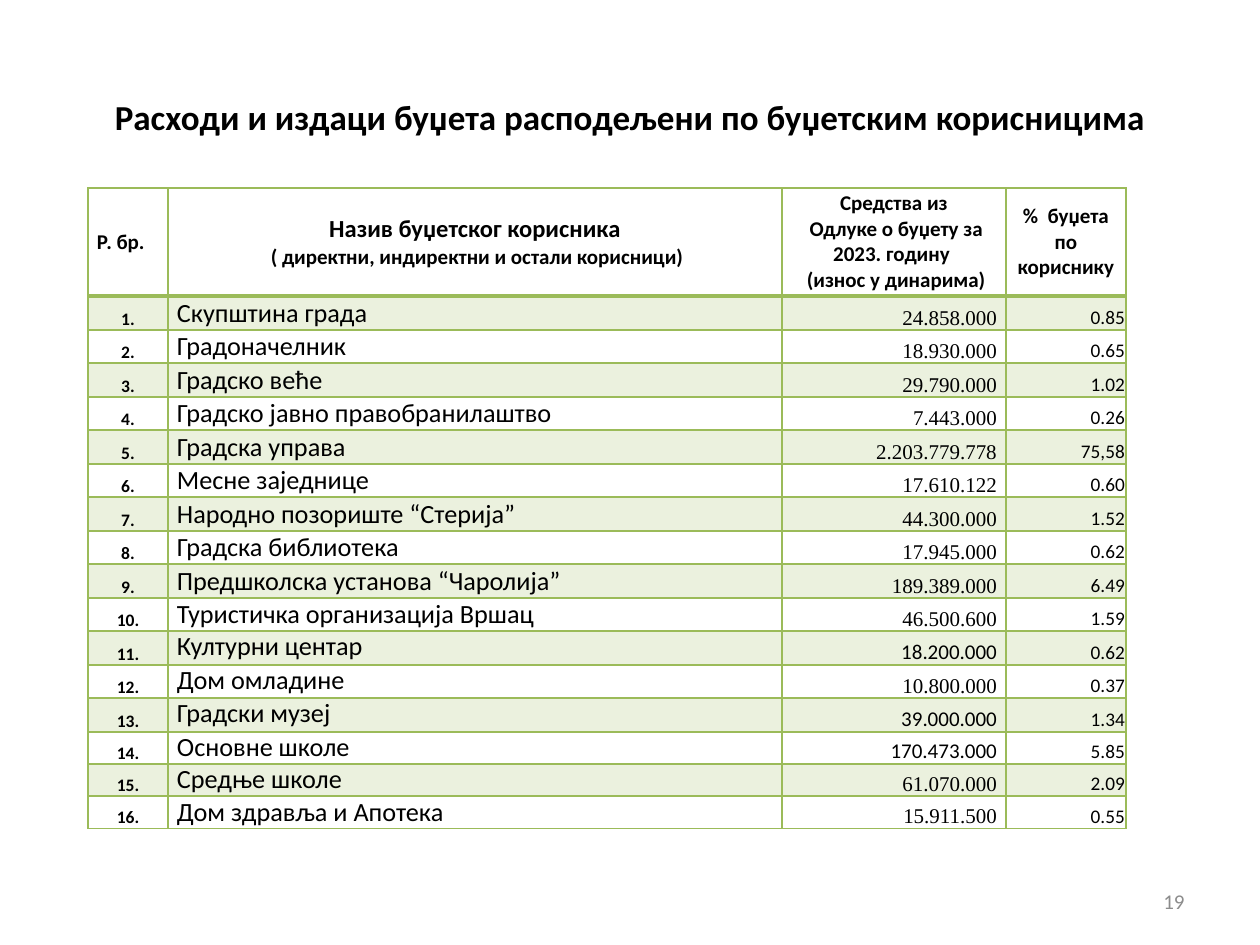
import pptx
import pptx.util
import pptx.dml.color
import pptx.enum.text
import pptx.oxml
import pptx.oxml.ns
from dataclasses import dataclass

ALIGN = pptx.enum.text.PP_ALIGN
ANCHOR = pptx.enum.text.MSO_ANCHOR


@dataclass(frozen=True)
class Theme:
    ink: str = "000000"
    grey: str = "8C8C8C"
    line: str = "9BBB59"
    band: str = "EBF1DE"
    sans: str = "Calibri"
    serif: str = "Times New Roman"
    title: int = 20
    name: int = 15
    head: int = 14
    body: int = 12
    share: int = 11
    index: int = 10
    thin: int = 1
    thick: int = 2


THEME = Theme()


def px(count):
    return pptx.util.Emu(round(count * 914400 / 126))


def rgb(code):
    return pptx.dml.color.RGBColor.from_string(code)


def assign(item, values):
    for key, value in values.items():
        setattr(item, key, value)


class Board:
    def __init__(self, deck, theme):
        self.theme = theme
        self.slide = deck.slides.add_slide(deck.slide_layouts[5])

    def letter(self, frame, lines, align, font=None, bold=False, color=None):
        """Fill a text frame with one paragraph per (text, size) pair."""
        for i, (text, size) in enumerate(lines):
            para = frame.paragraphs[0] if i == 0 else frame.add_paragraph()
            para.alignment = align
            run = para.add_run()
            run.text = text
            assign(run.font, {"name": font or self.theme.sans, "bold": bold,
                              "size": pptx.util.Pt(size)})
            run.font.color.rgb = rgb(color or self.theme.ink)

    def place(self, shape, box):
        assign(shape, dict(zip(("left", "top", "width", "height"), map(px, box))))
        assign(shape.text_frame, {"word_wrap": True, "vertical_anchor": ANCHOR.MIDDLE})

    def title(self, text, box):
        shape = self.slide.shapes.title
        self.place(shape, box)
        self.letter(shape.text_frame, [(text, self.theme.title)], ALIGN.CENTER, bold=True)

    def label(self, text, box):
        shape = self.slide.shapes.add_textbox(*map(px, box))
        self.place(shape, box)
        self.letter(shape.text_frame, [(text, self.theme.body)], ALIGN.RIGHT,
                    color=self.theme.grey)

    def table(self, left, top, cols, rows):
        box = (left, top, sum(cols), sum(rows))
        frame = self.slide.shapes.add_table(len(rows), len(cols), *map(px, box))
        grid = frame.table
        assign(grid, {"first_row": False, "horz_banding": False})
        for col, width in zip(grid.columns, cols):
            col.width = px(width)
        for row, height in zip(grid.rows, rows):
            row.height = px(height)
        return grid

    def border(self, cell, top, bottom):
        thin = self.theme.thin
        props = cell._tc.get_or_add_tcPr()
        for side, width in zip("LRTB", (thin, thin, top, bottom)):
            props.append(pptx.oxml.parse_xml(
                f'<a:ln{side} {pptx.oxml.ns.nsdecls("a")} w="{pptx.util.Pt(width)}">'
                f'<a:solidFill><a:srgbClr val="{self.theme.line}"/></a:solidFill>'
                f'</a:ln{side}>'))

    def cell(self, grid, row, col, lines, align, anchor, **style):
        cell = grid.cell(row, col)
        edge = 1 if row and col == 3 else 9
        assign(cell, {"margin_left": px(edge), "margin_right": px(edge),
                      "margin_top": px(0), "margin_bottom": px(0),
                      "vertical_anchor": anchor})
        theme = self.theme
        self.border(cell, theme.thick if row == 1 else theme.thin,
                    theme.thick if row == 0 else theme.thin)
        if row % 2:
            cell.fill.solid()
            cell.fill.fore_color.rgb = rgb(theme.band)
        else:
            cell.fill.background()
        self.letter(cell.text_frame, lines, align, **style)


HEADS = [
    [("Р. бр.", THEME.body)],
    [("Назив буџетског корисника", THEME.head),
     (" ( директни, индиректни и остали корисници)", THEME.body)],
    [("Средства из", THEME.body),
     (" Одлуке о буџету за 2023. годину ", THEME.body),
     (" (износ у динарима)", THEME.body)],
    [("%  буџета по кориснику", THEME.body)],
]
USERS = [
    ("Скупштина града", "24.858.000", "0.85"),
    ("Градоначелник", "18.930.000", "0.65"),
    ("Градско веће", "29.790.000", "1.02"),
    ("Градско јавно правобранилаштво", "7.443.000", "0.26"),
    ("Градска управа", "2.203.779.778", "75,58"),
    ("Месне заједнице", "17.610.122", "0.60"),
    ("Народно позориште “Стерија”", "44.300.000", "1.52"),
    ("Градска библиотека", "17.945.000", "0.62"),
    ("Предшколска установа “Чаролија”", "189.389.000", "6.49"),
    ("Туристичка организација Вршац", "46.500.600", "1.59"),
    ("Културни центар", "18.200.000", "0.62"),
    ("Дом омладине ", "10.800.000", "0.37"),
    ("Градски музеј", "39.000.000", "1.34"),
    ("Основне школе", "170.473.000", "5.85"),
    ("Средње школе", "61.070.000", "2.09"),
    ("Дом здравља и Апотека", "15.911.500", "0.55"),
]
SANS_ROWS = {11, 13, 14}
TOP_ROWS = range(11, 16)


def main():
    deck = pptx.Presentation()
    assign(deck, {"slide_width": px(1260), "slide_height": px(945)})
    board = Board(deck, THEME)
    board.title("Расходи и издаци буџета расподељени по буџетским корисницима",
                (63, 38, 1134, 157))

    heights = [108] + [34, 33] * 6 + [34] + [32] * 3
    grid = board.table(88, 188, [80, 614, 224, 120], heights)
    for col, lines in enumerate(HEADS):
        board.cell(grid, 0, col, lines, ALIGN.CENTER if col else ALIGN.LEFT,
                   ANCHOR.MIDDLE, bold=True)
    for row, (name, amount, share) in enumerate(USERS, 1):
        upper = row in TOP_ROWS
        board.cell(grid, row, 0, [(f"{row}.", THEME.index)], ALIGN.CENTER,
                   ANCHOR.BOTTOM, bold=True)
        board.cell(grid, row, 1, [(name, THEME.name)],
                   ALIGN.JUSTIFY if upper else ALIGN.LEFT,
                   ANCHOR.TOP if upper else ANCHOR.BOTTOM)
        board.cell(grid, row, 2, [(amount, THEME.body)], ALIGN.RIGHT, ANCHOR.BOTTOM,
                   font=THEME.sans if row in SANS_ROWS else THEME.serif)
        board.cell(grid, row, 3, [(share, THEME.share)], ALIGN.RIGHT, ANCHOR.BOTTOM)

    board.label("19", (903, 876, 294, 50))
    deck.save("out.pptx")


if __name__ == "__main__":
    main()
